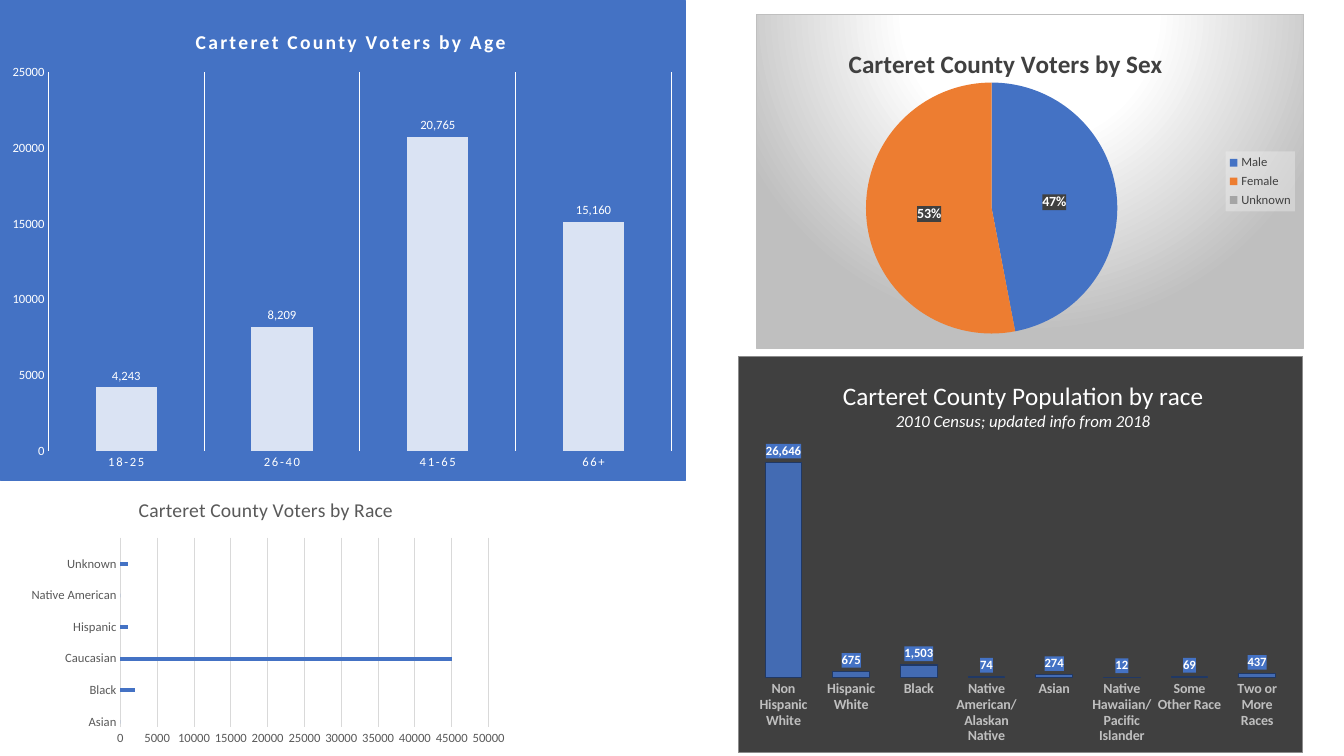
from dataclasses import dataclass

from pptx import Presentation
from pptx.chart.data import CategoryChartData
from pptx.dml.color import RGBColor
from pptx.enum.chart import XL_CHART_TYPE, XL_LABEL_POSITION, XL_LEGEND_POSITION, XL_TICK_MARK
from pptx.oxml import parse_xml
from pptx.oxml.ns import nsdecls, qn
from pptx.util import Inches, Pt


@dataclass(frozen=True)
class Theme:
    font: str = "Calibri"
    white: str = "FFFFFF"
    blue: str = "4472C4"
    pale_blue: str = "DAE3F3"
    navy: str = "203864"
    orange: str = "ED7D31"
    gray: str = "A5A5A5"
    silver: str = "BFBFBF"
    border_gray: str = "8C8C8C"
    grid_gray: str = "D9D9D9"
    mist: str = "F2F2F2"
    text_gray: str = "595959"
    charcoal: str = "404040"
    headline: int = 18
    title: int = 14
    subtitle: int = 12
    emphasis: int = 10
    label: int = 9


THEME = Theme()


def format_font(font, size, color, bold=False, italic=False, spacing=0):
    """Format a font; spacing is in hundredths of a point."""
    font.name, font.size = THEME.font, Pt(size)
    font.bold, font.italic = bold, italic
    font.color.rgb = RGBColor.from_string(color)
    if spacing:
        font._rPr.set("spc", str(spacing))


def add_text(paragraph, text, **text_format):
    run = paragraph.add_run()
    run.text = text
    format_font(run.font, **text_format)


def solid(color, opacity=100):
    return (f'<a:solidFill><a:srgbClr val="{color}"><a:alpha val="{opacity * 1000}"/>'
            "</a:srgbClr></a:solidFill>")


def spotlight(center, edge):
    """Circular gradient centred above the chart."""
    stops = "".join(f'<a:gs pos="{position * 1000}"><a:srgbClr val="{color}"/></a:gs>'
                    for position, color in ((0, center), (39, center), (100, edge)))
    return (f'<a:gradFill><a:gsLst>{stops}</a:gsLst><a:path path="circle">'
            '<a:fillToRect l="50000" t="-80000" r="50000" b="180000"/></a:path></a:gradFill>')


def shape_properties(fill, border=None, width=0.75):
    line = solid(border) if border else "<a:noFill/>"
    return parse_xml(f'<c:spPr {nsdecls("c", "a")}>{fill}'
                     f'<a:ln w="{Pt(width)}">{line}</a:ln></c:spPr>')


def set_layout(parent, index, inner=False, **fractions):
    """Fix an element's place as fractions of the chart area."""
    for layout in parent.findall(qn("c:layout")):
        parent.remove(layout)
    target = '<c:layoutTarget val="inner"/>' if inner else ""
    modes = "".join(f'<c:{key}Mode val="edge"/>' for key in ("x", "y"))
    values = "".join(f'<c:{key} val="{value}"/>' for key, value in fractions.items())
    parent.insert(index, parse_xml(f'<c:layout {nsdecls("c")}><c:manualLayout>'
                                   f"{target}{modes}{values}</c:manualLayout></c:layout>"))


class ChartSlide:
    def __init__(self, presentation, theme):
        self.theme = theme
        self.slide = presentation.slides.add_slide(presentation.slide_layouts[6])

    def add_chart(self, kind, box, plot_box, categories, values, gap=None):
        data = CategoryChartData()
        data.categories = categories
        data.add_series("Series 1", values)
        chart = self.slide.shapes.add_chart(kind, *map(Inches, box), data).chart
        chart.font.name, chart.font.size = self.theme.font, Pt(self.theme.emphasis)
        chart.has_legend = False
        space = chart._chartSpace
        if space.find(qn("c:roundedCorners")) is None:
            space.find(qn("c:chart")).addprevious(
                parse_xml(f'<c:roundedCorners {nsdecls("c")} val="0"/>'))
        set_layout(space.find(qn("c:chart")).find(qn("c:plotArea")), 0, inner=True,
                   **dict(zip("xywh", plot_box)))
        if gap is not None:
            chart.plots[0].gap_width = gap
            chart.plots[0].vary_by_categories = False
        return chart

    def set_area(self, chart, fill, border=None, width=0.75):
        chart._chartSpace.find(qn("c:chart")).addnext(shape_properties(fill, border, width))

    def set_title(self, chart, x, y, *lines):
        """Each line is a pair of text and its format."""
        frame = chart.chart_title.text_frame
        for number, (text, text_format) in enumerate(lines):
            paragraph = frame.add_paragraph() if number else frame.paragraphs[0]
            add_text(paragraph, text, **text_format)
        set_layout(chart.chart_title._element, 1, x=x, y=y)

    def set_axis(self, axis, line=None, grid=None, **text_format):
        axis.major_tick_mark = axis.minor_tick_mark = XL_TICK_MARK.NONE
        format_font(axis.tick_labels.font, **text_format)
        axis.has_major_gridlines = grid is not None
        if grid:
            self.set_line(axis.major_gridlines.format.line, grid)
        self.set_line(axis.format.line, line)

    def set_line(self, line, color):
        if color is None:
            line.fill.background()
        else:
            line.color.rgb = RGBColor.from_string(color)
            line.width = Pt(0.75)

    def set_scale(self, axis, maximum, step):
        axis.minimum_scale, axis.maximum_scale, axis.major_unit = 0, maximum, step
        axis.tick_labels.number_format = "0"
        axis.tick_labels.number_format_is_linked = False

    def set_fill(self, item, color):
        item.format.fill.solid()
        item.format.fill.fore_color.rgb = RGBColor.from_string(color)

    def set_labels(self, chart, position, number_format="#,##0", percent=False,
                   box_fill=None, **text_format):
        labels = chart.plots[0].series[0].data_labels
        labels.show_value, labels.show_percentage = not percent, percent
        labels.number_format, labels.number_format_is_linked = number_format, False
        labels.position = position
        format_font(labels.font, **text_format)
        if box_fill:
            labels._element.find(qn("c:txPr")).addprevious(shape_properties(box_fill))

    def set_legend(self, chart, fill, **text_format):
        chart.has_legend = True
        chart.legend.position = XL_LEGEND_POSITION.RIGHT
        chart.legend.include_in_layout = False
        format_font(chart.legend.font, **text_format)
        chart.legend._element.find(qn("c:txPr")).addprevious(shape_properties(fill))


def add_age_chart(page):
    theme = page.theme
    chart = page.add_chart(XL_CHART_TYPE.COLUMN_CLUSTERED, (0, 0, 6.8, 4.77),
                           (0.07, 0.15, 0.91, 0.79), ["18-25", "26-40", "41-65", "66+"],
                           [4243, 8209, 20765, 15160], gap=154)
    page.set_area(chart, solid(theme.blue), theme.blue)
    page.set_title(chart, 0.28, 0.05, ("Carteret County Voters by Age", dict(
        size=theme.title, color=theme.white, bold=True, spacing=150)))
    text = dict(size=theme.label, color=theme.white)
    page.set_axis(chart.category_axis, grid=theme.white, spacing=120, **text)
    page.set_axis(chart.value_axis, **text)
    page.set_scale(chart.value_axis, 25000, 5000)
    page.set_fill(chart.plots[0].series[0], theme.pale_blue)
    page.set_labels(chart, XL_LABEL_POSITION.OUTSIDE_END, **text)


def add_sex_chart(page):
    theme = page.theme
    chart = page.add_chart(XL_CHART_TYPE.PIE, (7.5, 0.14, 5.43, 3.32),
                           (0.2, 0.2, 0.46, 0.76), ["Male", "Female", "Unknown"], [47, 53, 0])
    page.set_area(chart, spotlight(theme.white, theme.silver), theme.silver)
    page.set_title(chart, 0.16, 0.08, ("Carteret County Voters by Sex", dict(
        size=theme.headline, color=theme.charcoal, bold=True)))
    for number, color in enumerate((theme.blue, theme.orange, theme.gray)):
        page.set_fill(chart.plots[0].series[0].points[number], color)
    page.set_labels(chart, XL_LABEL_POSITION.CENTER, "0%", percent=True,
                    box_fill=solid(theme.charcoal, 90),
                    size=theme.emphasis, color=theme.white, bold=True)
    page.set_legend(chart, solid(theme.mist, 39), size=theme.label, color=theme.charcoal)


def add_race_chart(page):
    theme = page.theme
    voters = {"Asian": 0, "Black": 2000, "Caucasian": 45000, "Hispanic": 1000,
              "Native American": 0, "Unknown": 1000}
    categories = [label for race in voters for label in (race, "", "")]
    values = [value for count in voters.values() for value in (count, None, None)]
    chart = page.add_chart(XL_CHART_TYPE.BAR_CLUSTERED, (0.22, 4.83, 4.87, 2.65),
                           (0.2, 0.19, 0.75, 0.71), categories, values, gap=182)
    page.set_title(chart, 0.23, 0.02, ("Carteret County Voters by Race", dict(
        size=theme.title, color=theme.text_gray)))
    text = dict(size=theme.label, color=theme.text_gray)
    page.set_axis(chart.category_axis, line=theme.grid_gray, **text)
    page.set_axis(chart.value_axis, grid=theme.grid_gray, **text)
    page.set_scale(chart.value_axis, 50000, 5000)
    page.set_fill(chart.plots[0].series[0], theme.blue)


def add_population_chart(page):
    theme = page.theme
    population = {"Non Hispanic White": 26646, "Hispanic White": 675, "Black": 1503,
                  "Native American/Alaskan Native": 74, "Asian": 274,
                  "Native Hawaiian/Pacific Islander": 12, "Some Other Race": 69,
                  "Two or More Races": 437}
    chart = page.add_chart(XL_CHART_TYPE.COLUMN_CLUSTERED, (7.32, 3.53, 5.6, 3.94),
                           (0.02, 0.2, 0.96, 0.61), list(population),
                           list(population.values()), gap=84)
    page.set_area(chart, solid(theme.charcoal), theme.border_gray, 0.5)
    page.set_title(
        chart, 0.18, 0.05,
        ("Carteret County Population by race", dict(size=theme.headline, color=theme.white)),
        ("2010 Census; updated info from 2018",
         dict(size=theme.subtitle, color=theme.white, italic=True)))
    page.set_axis(chart.category_axis, size=theme.emphasis, color=theme.silver, bold=True)
    page.set_scale(chart.value_axis, 30000, 5000)
    chart.value_axis.has_major_gridlines = chart.value_axis.visible = False
    series = chart.plots[0].series[0]
    page.set_fill(series, theme.blue)
    series._element.find(f".//{qn('a:srgbClr')}").append(
        parse_xml(f'<a:alpha {nsdecls("a")} val="88000"/>'))
    page.set_line(series.format.line, theme.navy)
    page.set_labels(chart, XL_LABEL_POSITION.OUTSIDE_END, box_fill=solid(theme.blue),
                    size=theme.label, color=theme.white, bold=True)


def main():
    presentation = Presentation()
    presentation.slide_width, presentation.slide_height = Inches(13.33), Inches(7.5)
    page = ChartSlide(presentation, THEME)
    for add_chart in (add_age_chart, add_sex_chart, add_race_chart, add_population_chart):
        add_chart(page)
    presentation.save("out.pptx")


if __name__ == "__main__":
    main()
